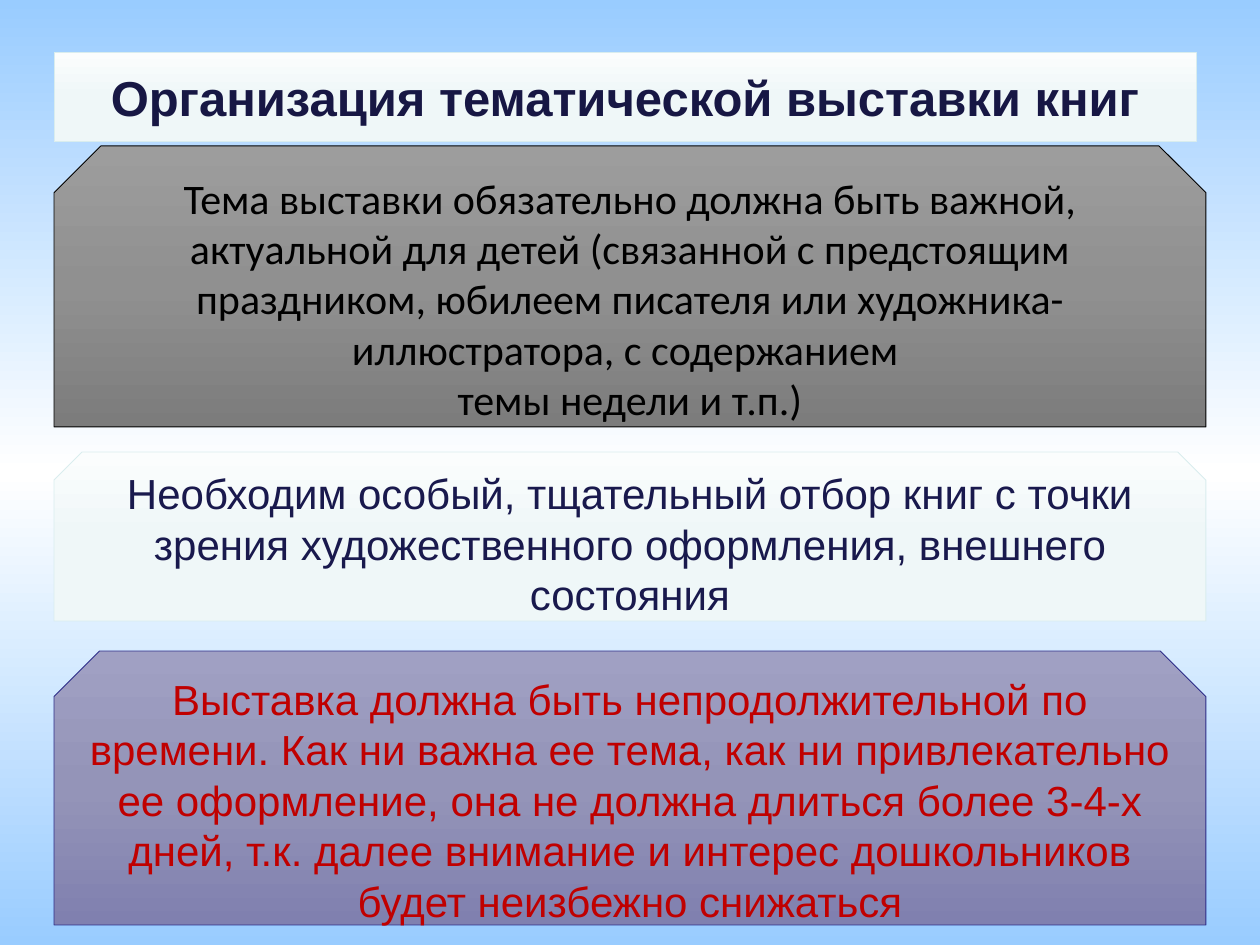
"""Build a slide of advice on organising a themed book exhibition."""
import copy

import lxml.etree
import pptx
import pptx.dml.color
import pptx.enum.shapes
import pptx.enum.text
import pptx.oxml.ns
import pptx.util

RGB = pptx.dml.color.RGBColor
SHAPES = pptx.enum.shapes.MSO_SHAPE
PX = 914400 // 126
LEFT = 54
LINE_SPACING = pptx.util.Pt(28.8)

BLACK = RGB(0x00, 0x00, 0x00)
RED = RGB(0xC0, 0x00, 0x00)
NAVY = RGB(0x19, 0x19, 0x4D)
DARK_NAVY = RGB(0x17, 0x17, 0x44)
SKY = RGB(0x99, 0xCC, 0xFF)
WHITE = RGB(0xFF, 0xFF, 0xFF)
PALE_EDGE = RGB(0xD9, 0xED, 0xEE)
VIOLET_EDGE = RGB(0x2D, 0x2D, 0x89)
BACKGROUND = (SKY, WHITE, SKY)
PALE = (RGB(0xFB, 0xFD, 0xFD), RGB(0xEF, 0xF7, 0xF8), RGB(0xED, 0xF7, 0xF7))
GREY = (RGB(0x9D, 0x9D, 0x9D), RGB(0x90, 0x90, 0x90), RGB(0x7C, 0x7C, 0x7C))
VIOLET = (RGB(0xA0, 0xA0, 0xC3), RGB(0x94, 0x94, 0xB8), RGB(0x80, 0x80, 0xAF))

TITLE = {
    "top": 52, "width": 1142, "height": 90, "fill": PALE, "edge": PALE_EDGE,
    "paras": ["Организация тематической выставки книг"],
    "font": {"name": "Arial", "size": pptx.util.Pt(28), "bold": True},
    "colour": DARK_NAVY,
}
PANELS = [
    {
        "top": 146, "width": 1152, "height": 281, "fill": GREY, "edge": BLACK,
        "paras": [
            "Тема выставки обязательно должна быть важной, актуальной для детей "
            "(связанной с предстоящим праздником, юбилеем писателя или "
            "художника-иллюстратора, с содержанием ",
            "темы недели и т.п.)",
        ],
        "font": {"name": "Calibri", "size": pptx.util.Pt(24)},
        "colour": BLACK,
    },
    {
        "top": 452, "width": 1152, "height": 169, "fill": PALE, "edge": PALE_EDGE,
        "paras": [
            "Необходим особый, тщательный отбор книг с точки зрения "
            "художественного оформления, внешнего состояния",
        ],
        "font": {"name": "Arial", "size": pptx.util.Pt(24)},
        "colour": NAVY,
    },
    {
        "top": 651, "width": 1152, "height": 274, "fill": VIOLET, "edge": VIOLET_EDGE,
        "paras": [
            "Выставка должна быть непродолжительной по времени. Как ни важна ее "
            "тема, как ни привлекательно ее оформление, она не должна длиться "
            "более 3-4-х дней, т.к. далее внимание и интерес дошкольников будет "
            "неизбежно снижаться",
        ],
        "font": {"name": "Arial", "size": pptx.util.Pt(24)},
        "colour": RED,
    },
]


def set_gradient(fill, colours):
    """Fill from top to bottom with evenly spaced colours."""
    fill.gradient()
    fill.gradient_angle = 270
    first = fill._fill._gradFill.gsLst[0]
    first.addnext(copy.deepcopy(first))
    for index, (stop, colour) in enumerate(zip(fill.gradient_stops, colours)):
        stop.color.rgb = colour
        stop.position = index / (len(colours) - 1)


def place(box, content):
    """Set the position of a box."""
    box.left = LEFT * PX
    for name in ("top", "width", "height"):
        setattr(box, name, content[name] * PX)


def round_corners(placeholder):
    """Give a placeholder a rounded outline."""
    qn = pptx.oxml.ns.qn
    outline = lxml.etree.Element(qn("a:prstGeom"), prst="roundRect")
    lxml.etree.SubElement(outline, qn("a:avLst"))
    placeholder._element.spPr.find(qn("a:xfrm")).addnext(outline)


def style(box, content):
    """Fill, outline and write a box."""
    set_gradient(box.fill, content["fill"])
    box.line.color.rgb = content["edge"]
    box.line.width = pptx.util.Pt(0.5)
    frame = box.text_frame
    frame.text = "\n".join(content["paras"])
    frame_format = {
        "word_wrap": True,
        "auto_size": pptx.enum.text.MSO_AUTO_SIZE.NONE,
        "vertical_anchor": pptx.enum.text.MSO_ANCHOR.MIDDLE,
    }
    for name, value in frame_format.items():
        setattr(frame, name, value)
    for para in frame.paragraphs:
        para.alignment = pptx.enum.text.PP_ALIGN.CENTER
        para.line_spacing = LINE_SPACING if box.is_placeholder is False else 1.0
        for span in para.runs:
            for name, value in content["font"].items():
                setattr(span.font, name, value)
            span.font.color.rgb = content["colour"]


def main():
    """Build and save the deck."""
    deck = pptx.Presentation()
    deck.slide_width = 1260 * PX
    deck.slide_height = 945 * PX
    page = deck.slides.add_slide(deck.slide_layouts[5])
    set_gradient(page.background.fill, BACKGROUND)

    title = page.shapes.title
    place(title, TITLE)
    round_corners(title)
    style(title, TITLE)

    for content in PANELS:
        panel = page.shapes.add_shape(SHAPES.SNIP_2_SAME_RECTANGLE, 0, 0, PX, PX)
        panel.shadow.inherit = False
        place(panel, content)
        style(panel, content)

    deck.save("out.pptx")


if __name__ == "__main__":
    main()
